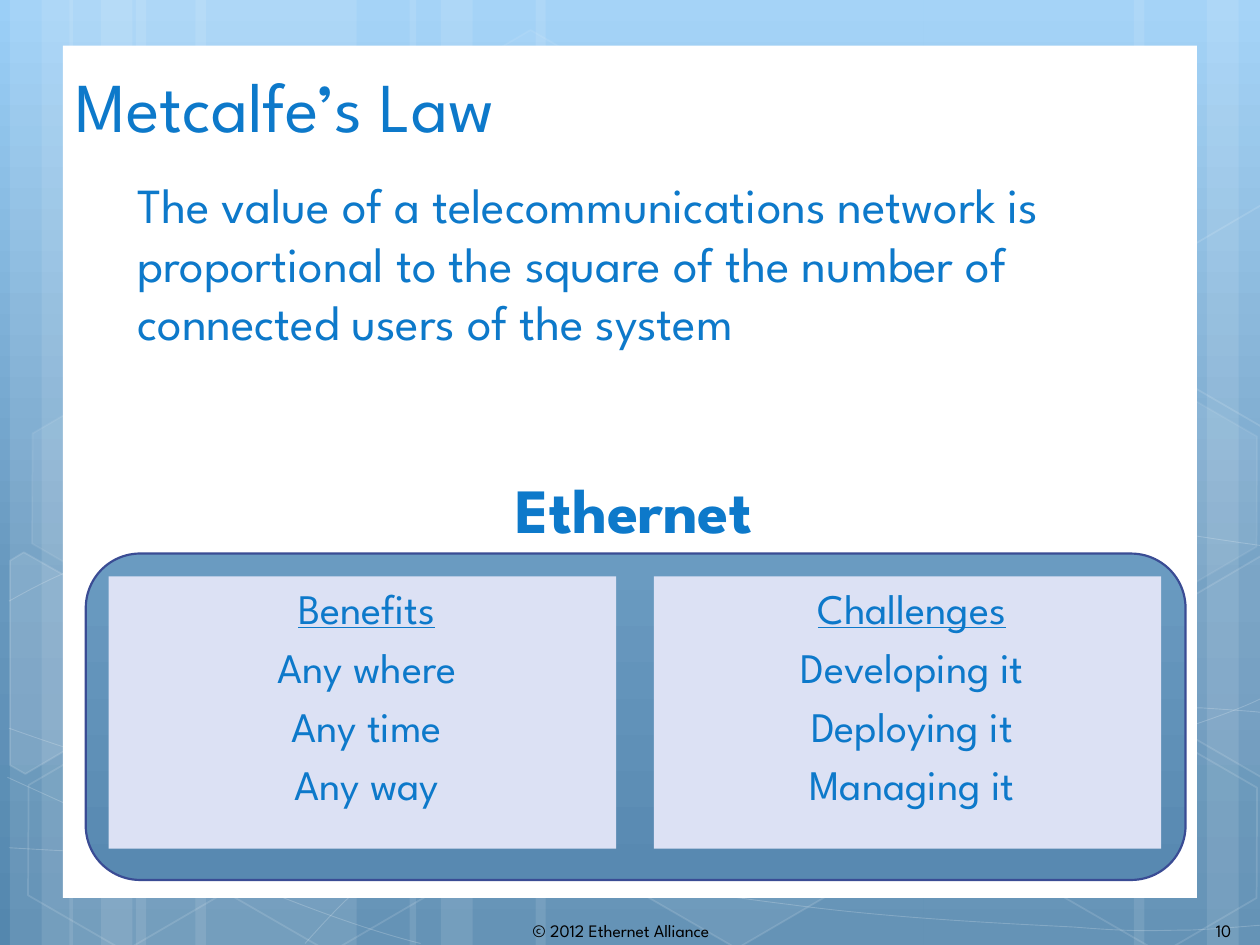
import math
from copy import deepcopy
from pptx import Presentation
from pptx import util as u
from pptx.dml.color import RGBColor
from pptx.enum import shapes, text
from pptx.oxml import ns
from lxml import etree

FONT, BLUE, WHITE = "League Spartan", "0D79CA", "FFFFFF"
KIND, ANCHOR = shapes.MSO_SHAPE, text.MSO_ANCHOR
CENTER = text.PP_ALIGN.CENTER

# Stripe left edges and widths
SET = [(2.54, 4.45), (0, 1.27), (0.64, 2.11)]
STRIPES = [(base + x, w) for base in (0.2, 1.4) for x, w in SET]
STRIPES += [(18.62, 4.45), (24.33, 1.27), (22.86, 2.11),
            (10.8, 7.82), (8.26, 1.27), (8.89, 2.11)]

# Each wave is a start point, then three points for every cubic curve
WAVES = [
    [(0.18, 17.09), (1.55, 17.17), (2.92, 17.25), (4.83, 17.22),
     (6.73, 17.2), (9.09, 17.15), (11.63, 16.89),
     (14.17, 16.64), (17.78, 16.15), (20.12, 15.67),
     (22.43, 15.19), (24.82, 14.43), (25.58, 14)],
    [(0.18, 12.12), (0.91, 11.71), (1.65, 11.33), (3.07, 10.95),
     (4.52, 10.57), (6.58, 10.01), (8.81, 9.83),
     (11.07, 9.65), (13.82, 9.63), (16.61, 9.83),
     (19.41, 10.03), (24.05, 10.82), (25.58, 11.02)],
    [(0.15, 15.67), (3.23, 17.07), (6.27, 18.47), (8.48, 19.02)],
    [(0.18, 14.68), (0.97, 14.96), (1.78, 15.24), (3.25, 15.65),
     (4.72, 16.03), (6.93, 16.66), (9.07, 17.09),
     (11.18, 17.53), (13.84, 17.98), (15.95, 18.24),
     (18.06, 18.52), (20.32, 18.62), (21.67, 18.69),
     (22.99, 18.8), (23.34, 18.75), (24, 18.75),
     (24.66, 18.72), (25.12, 18.67), (25.58, 18.64)],
    [(6.15, 19.02), (6.6, 18.52), (7.06, 18.01), (7.67, 17.55),
     (8.28, 17.09), (9.14, 16.59), (9.86, 16.23),
     (10.57, 15.88), (11, 15.72), (11.94, 15.47),
     (12.85, 15.22), (14.55, 14.86), (15.44, 14.68),
     (16.36, 14.5), (16.48, 14.5), (17.27, 14.45),
     (18.06, 14.38), (19.3, 14.3), (20.17, 14.27),
     (21.06, 14.25), (22.5, 14.27), (22.5, 14.27),
     (23.07, 14.27), (23.64, 14.27), (24.21, 14.27),
     (24.66, 14.3), (25.1, 14.33), (25.32, 14.35),
     (25.55, 14.38), (25.5, 14.35), (25.55, 14.38)],
]

# Left, top, fill opacity, line opacity
HEXES = [(8.48, 0.91, 4, 8), (12.62, 14.96, 6, 12), (0.28, 15.01, 0, 12),
         (0.36, 7.92, 7, 8), (4.42, 15.04, 0, 12), (19.13, 11.51, 10, 12),
         (21.18, 15.06, 0, 12), (21.18, 7.98, 7, 8)]

# Hexagons cut off by the slide's edge: points, pivot, fill opacity
LEFT = [(0.2, 11.3), (0.48, 11.13), (2.44, 12.24), (2.41, 14.48),
        (0.51, 15.6), (0.2, 15.42)]
RIGHT = [(23.52, 12.32), (25.43, 11.2), (25.63, 11.33), (25.63, 15.57),
         (25.45, 15.67), (23.52, 14.55)]
CUTS = [(LEFT, (0.91, 13.59), 10), (RIGHT, (25.02, 13.21), 4),
        ([(x, y - 7.07) for x, y in RIGHT], (25.02, 6.14), 0)]


def tint(color, value, alpha=100):
    """Set a colour format, with its opacity in percent."""
    color.rgb = RGBColor.from_string(value)
    if alpha < 100:
        node = color._xFill.find(ns.qn("a:srgbClr"))
        etree.SubElement(node, ns.qn("a:alpha")).set("val", str(alpha * 1000))


def paint(shape, fill=None, line=None, width=1, veil=100, edge=100):
    """Fill and outline a shape; veil and edge are opacities."""
    shape.shadow.inherit = False
    if fill and veil:
        shape.fill.solid()
        tint(shape.fill.fore_color, fill, veil)
    else:
        shape.fill.background()
    if line:
        shape.line.width = u.Pt(width)
        tint(shape.line.color, line, edge)
    else:
        shape.line.fill.background()


def blend(fill, *stops):
    """Vertical gradient from (position, colour) stops."""
    fill.gradient()
    fill.gradient_angle = 270
    first = fill.gradient_stops[0]._gs
    for _ in stops[2:]:
        first.addnext(deepcopy(first))
    for stop, (pos, value) in zip(fill.gradient_stops, stops):
        stop.position = pos
        for child in list(stop._gs):
            stop._gs.remove(child)
        tint(stop.color, value)


def shape(slide, kind, box):
    return slide.shapes.add_shape(kind, *map(u.Cm, box))


def trace(slide, pts, close):
    start, *rest = [(u.Cm(x), u.Cm(y)) for x, y in pts]
    build = slide.shapes.build_freeform(*start)
    build.add_line_segments(rest, close=close)
    return build.convert_to_shape()


def curve(slide, pts):
    """Trace the points, then join each three into one cubic curve."""
    wave = trace(slide, pts, False)
    lines = list(wave._element.iter(ns.qn("a:lnTo")))
    for i in range(0, len(lines), 3):
        bend = etree.Element(ns.qn("a:cubicBezTo"))
        lines[i].addprevious(bend)
        for line in lines[i:i + 3]:
            bend.append(line[0])
            line.getparent().remove(line)
    return wave


def turn(pts, pivot, angle):
    (a, b), c, s = pivot, math.cos(angle), math.sin(angle)
    return [(a + (x - a) * c - (y - b) * s, b + (x - a) * s + (y - b) * c)
            for x, y in pts]


def write(frame, lines, size, color=BLUE, align=None, inset=0, gap=0):
    for i, line in enumerate(lines):
        para = frame.paragraphs[0] if i == 0 else frame.add_paragraph()
        para.text = line
        para.alignment = align
        para._p.get_or_add_pPr().set("marL", str(u.Cm(inset)))
        if i:
            para.space_before = u.Pt(gap)
        para.font.name, para.font.size = FONT, u.Pt(size)
        tint(para.font.color, color)


def label(slide, box, line, size, wrap=True, **look):
    frame = slide.shapes.add_textbox(*map(u.Cm, box)).text_frame
    frame.word_wrap = wrap
    write(frame, [line], size, **look)
    return frame


def backdrop(slide, wide, high):
    blend(slide.background.fill,
          (0, "9BCFF7"), (0.62, "6798BE"), (1, "5487AE"))
    for x, w in STRIPES:
        paint(shape(slide, KIND.RECTANGLE, (x, 0, w, high)), WHITE, veil=10)
    for wave in WAVES:
        paint(curve(slide, wave), None, WHITE, 0.5, edge=20)
    for x, y, veil, edge in HEXES:
        hexa = shape(slide, KIND.HEXAGON, (x, y, 4.45, 3.86))
        hexa.adjustments[0] = 0.285
        hexa.rotation = 30
        paint(hexa, WHITE, WHITE, 1, veil, edge)
    for pts, pivot, veil in CUTS:
        cut = trace(slide, turn(pts, pivot, -math.pi / 6), True)
        cut.rotation = 30
        paint(cut, WHITE, WHITE, 1, veil, 12)
    paint(shape(slide, KIND.RECTANGLE, (1.27, 0.92, wide - 2.54, 17.18)), WHITE)


def footer(slide, top):
    for x, w, line in ((24.26, 0.94, "10"),
                       (10.49, 4.7, "© 2012 Ethernet Alliance")):
        label(slide, (x, top, w, 0.69), line, 10, wrap=False, color="000000")


def card(slide, box, lines):
    rect = shape(slide, KIND.RECTANGLE, box)
    paint(rect, "DCE1F4")
    frame = rect.text_frame
    frame.vertical_anchor = ANCHOR.TOP
    write(frame, lines, 24, align=CENTER, inset=0.18, gap=4.8)
    frame.paragraphs[0].font.underline = True


def panel(slide, x, y, w, h):
    """Rounded panel with its heading above and two cards inside."""
    back = shape(slide, KIND.ROUNDED_RECTANGLE, (x, y, w, h))
    paint(back, WHITE, "3A4C94", 1.25)
    blend(back.fill, (0, "6A9BC1"), (1, "5889B1"))
    cards = (["Benefits", "Any where", "Any time", "Any way"],
             ["Challenges", "Developing it", "Deploying it", "Managing it"])
    for i, lines in enumerate(cards):
        card(slide, (x + 0.46 + i * 10.99, y + 0.46, 10.23, 5.49), lines)
    head = label(slide, (x + 6.25, y - 1.8, 9.6, 1.8), "Ethernet", 36,
                 align=CENTER)
    head.paragraphs[0].font.bold = True


def main():
    deck = Presentation()
    deck.slide_width, deck.slide_height = u.Cm(25.4), u.Cm(19.05)
    slide = deck.slides.add_slide(deck.slide_layouts[6])
    backdrop(slide, 25.4, 19.05)
    footer(slide, 18.42)
    title = label(slide, (1.27, 1.06, 18.42, 2.11), "Metcalfe’s Law", 40)
    title.vertical_anchor = ANCHOR.MIDDLE
    label(slide, (2.34, 3.39, 19.56, 5.49),
          "The value of a telecommunications network is proportional to the "
          "square of the number of connected users of the system", 28,
          inset=0.18)
    panel(slide, 1.73, 11.16, 22.17, 6.58)
    deck.save("out.pptx")


if __name__ == "__main__":
    main()
